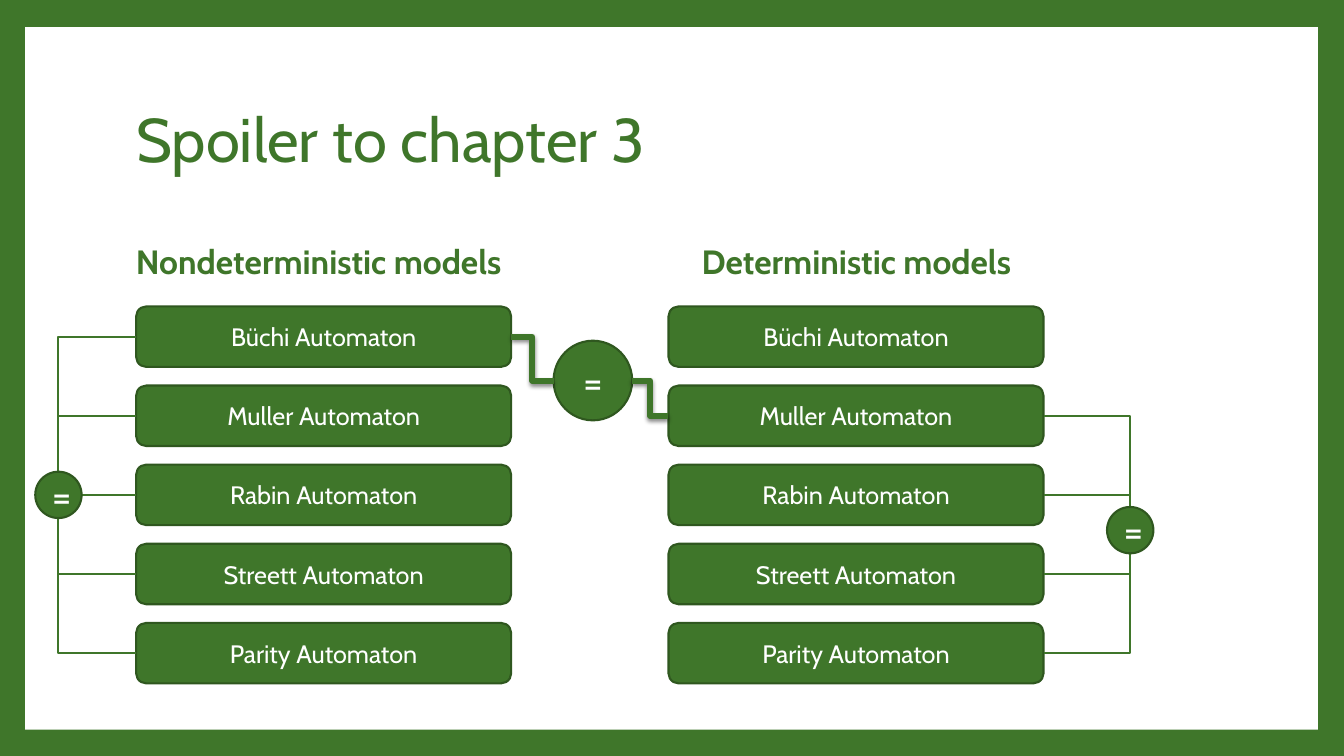
from lxml.etree import SubElement
from pptx import Presentation
from pptx.dml.color import RGBColor
from pptx.enum.shapes import MSO_CONNECTOR as CONNECTOR, MSO_SHAPE as SHAPE
from pptx.enum.text import MSO_ANCHOR as ANCHOR, PP_ALIGN as ALIGN
from pptx.oxml.ns import qn
from pptx.util import Inches, Pt

GREEN, DARK_GREEN, WHITE = "3F762A", "2F571F", "FFFFFF"
FONT = "Cabin"
MODELS = ["Büchi", "Muller", "Rabin", "Streett", "Parity"]
ROW_TOP, ROW_PITCH = 3.04, 0.785
MODEL_WIDTH, MODEL_HEIGHT = 3.72, 0.6
LEFT_COLUMN, RIGHT_COLUMN = 1.35, 6.63


def color(value):
    return RGBColor.from_string(value)


def row_middle(row):
    return ROW_TOP + row * ROW_PITCH + MODEL_HEIGHT / 2


def write(shape, text, size, ink, align=ALIGN.LEFT, bold=False, spacing=1.0):
    frame = shape.text_frame
    frame.text = text
    frame.word_wrap = True
    frame.vertical_anchor = ANCHOR.MIDDLE
    para = frame.paragraphs[0]
    para.alignment = align
    para.line_spacing = spacing
    font = para.runs[0].font
    font.name, font.size, font.bold = FONT, Pt(size), bold
    font.color.rgb = color(ink)


def add_node(slide, kind, box, text, size):
    node = slide.shapes.add_shape(kind, *map(Inches, box))
    node.shadow.inherit = False
    node.fill.solid()
    node.fill.fore_color.rgb = color(GREEN)
    node.line.color.rgb = color(DARK_GREEN)
    node.line.width = Pt(1.5)
    write(node, text, size, WHITE, ALIGN.CENTER)


def add_link(slide, start, end, preset, width=1.5, shadow=False):
    kind = CONNECTOR.STRAIGHT if preset == "line" else CONNECTOR.ELBOW
    link = slide.shapes.add_connector(kind, *map(Inches, start + end))
    link.line.color.rgb = color(GREEN)
    link.line.width = Pt(width)
    properties = link._element.spPr
    properties.find(qn("a:prstGeom")).set("prst", preset)
    effects = SubElement(properties, qn("a:effectLst"))
    if shadow:
        outer = SubElement(effects, qn("a:outerShdw"), blurRad=str(Pt(3)),
                           dist=str(Pt(2)), dir="5400000", rotWithShape="0")
        black = SubElement(outer, qn("a:srgbClr"), val="000000")
        SubElement(black, qn("a:alpha"), val="45000")


def add_frame(slide):
    slide.background.fill.solid()
    slide.background.fill.fore_color.rgb = color(GREEN)
    panel = slide.shapes.add_shape(
        SHAPE.RECTANGLE, *map(Inches, (0.25, 0.27, 12.82, 6.97)))
    panel.shadow.inherit = False
    panel.fill.solid()
    panel.fill.fore_color.rgb = color(WHITE)
    panel.line.fill.background()
    slide.shapes._spTree.insert(2, panel._element)


def add_title(slide, box, text):
    title = slide.shapes.title
    title.left, title.top, title.width, title.height = map(Inches, box)
    write(title, text, 44, GREEN, spacing=0.9)


def add_column(slide, left, heading, heading_left):
    label = slide.shapes.add_textbox(
        *map(Inches, (heading_left, 2.19, 5.2, 0.85)))
    write(label, heading, 24, GREEN, bold=True, spacing=0.9)
    for row, model in enumerate(MODELS):
        box = (left, ROW_TOP + row * ROW_PITCH, MODEL_WIDTH, MODEL_HEIGHT)
        add_node(slide, SHAPE.ROUNDED_RECTANGLE, box, f"{model} Automaton", 18)


def add_equivalence(slide, center, edge, rows):
    """Join the given rows, at the column edge, to one equals sign."""
    x, y = center
    radius = 0.23
    for row in rows:
        middle = row_middle(row)
        if abs(middle - y) < 0.02:
            side = x + radius if edge > x else x - radius
            add_link(slide, (edge, middle), (side, middle), "line")
        else:
            rim = y - radius if middle < y else y + radius
            add_link(slide, (edge, middle), (x, rim), "bentConnector2")
    box = (x - radius, y - radius, 2 * radius, 2 * radius)
    add_node(slide, SHAPE.FLOWCHART_CONNECTOR, box, "=", 28)


def add_bridge(slide, box):
    """Join nondeterministic Büchi to deterministic Muller."""
    left, top, width, height = box
    middle = top + height / 2
    add_node(slide, SHAPE.FLOWCHART_CONNECTOR, box, "=", 28)
    add_link(slide, (LEFT_COLUMN + MODEL_WIDTH, row_middle(0)),
             (left, middle), "bentConnector3", 4.25, True)
    add_link(slide, (left + width, middle),
             (RIGHT_COLUMN, row_middle(1)), "bentConnector3", 4.25, True)


def main():
    deck = Presentation()
    deck.slide_width, deck.slide_height = Inches(13.33), Inches(7.5)
    slide = deck.slides.add_slide(deck.slide_layouts[5])
    add_frame(slide)
    add_title(slide, (1.25, 0.67, 10.8, 1.48), "Spoiler to chapter 3")
    add_column(slide, LEFT_COLUMN, "Nondeterministic models", 1.25)
    add_column(slide, RIGHT_COLUMN, "Deterministic models", 6.86)
    add_equivalence(slide, (0.58, 4.91), LEFT_COLUMN, range(5))
    add_equivalence(slide, (11.21, 5.26), RIGHT_COLUMN + MODEL_WIDTH,
                    range(1, 5))
    add_bridge(slide, (5.49, 3.38, 0.78, 0.79))
    deck.save("out.pptx")


if __name__ == "__main__":
    main()
